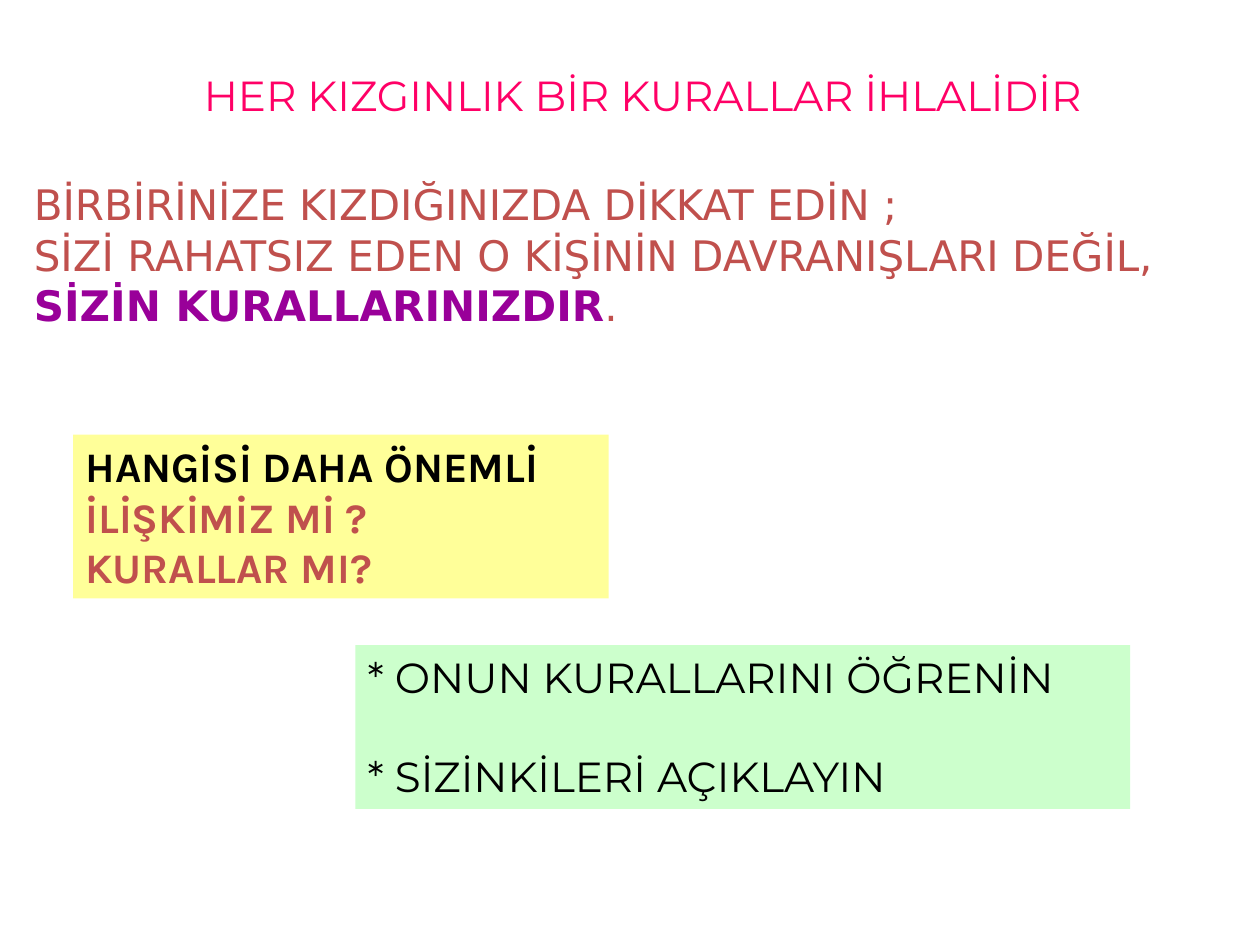
from pptx import Presentation
from pptx.dml.color import RGBColor as RGB
from pptx.enum.shapes import MSO_SHAPE as Shape
from pptx.enum.text import MSO_ANCHOR as Anchor, PP_ALIGN as Align
from pptx.util import Inches, Pt

PINK = RGB(0xFF, 0x00, 0x66)
RED = RGB(0xC0, 0x50, 0x4D)
PURPLE = RGB(0x99, 0x00, 0x99)
BLACK = RGB(0x00, 0x00, 0x00)
YELLOW = RGB(0xFF, 0xFF, 0x99)
GREEN = RGB(0xCC, 0xFF, 0xCC)


def write(shape, lines, font, align=Align.LEFT, gap=0):
    """Each line is a list of (text, colour, bold) runs."""
    frame = shape.text_frame
    frame.word_wrap = True
    frame.vertical_anchor = Anchor.TOP
    for i, line in enumerate(lines):
        para = frame.add_paragraph() if i else frame.paragraphs[0]
        para.alignment = align
        para.space_before = Pt(gap if i else 0)
        for text, color, bold in line:
            run = para.add_run()
            run.text = text
            run.font.name = font
            run.font.size = Pt(24)
            run.font.bold = bold
            run.font.color.rgb = color


def add_panel(slide, box, fill):
    panel = slide.shapes.add_shape(Shape.RECTANGLE, *map(Inches, box))
    panel.shadow.inherit = False
    panel.fill.solid()
    panel.fill.fore_color.rgb = fill
    panel.line.fill.background()
    return panel


def add_title(slide, box):
    title = slide.shapes.add_textbox(*map(Inches, box))
    write(title, [[("HER KIZGINLIK BİR KURALLAR İHLALİDİR", PINK, False)]],
          "Montserrat", align=Align.CENTER)


def add_advice(slide, box):
    advice = slide.shapes.add_textbox(*map(Inches, box))
    write(advice, [
        [("BİRBİRİNİZE KIZDIĞINIZDA DİKKAT EDİN ;", RED, False)],
        [("SİZİ RAHATSIZ EDEN O KİŞİNİN DAVRANIŞLARI DEĞİL,", RED, False)],
        [("SİZİN KURALLARINIZDIR", PURPLE, True), (".", RED, False)],
    ], "DejaVu Sans")


def add_question(slide, box):
    write(add_panel(slide, box, YELLOW), [
        [("HANGİSİ DAHA ÖNEMLİ", BLACK, True)],
        [("İLİŞKİMİZ Mİ ?", RED, True)],
        [("KURALLAR MI?", RED, True)],
    ], "Karla")


def add_steps(slide, box):
    write(add_panel(slide, box, GREEN), [
        [("* ONUN KURALLARINI ÖĞRENİN", BLACK, False)],
        [("* SİZİNKİLERİ AÇIKLAYIN", BLACK, False)],
    ], "Montserrat", gap=28)


def main():
    deck = Presentation()
    deck.slide_width, deck.slide_height = Inches(10), Inches(7.5)
    slide = deck.slides.add_slide(deck.slide_layouts[6])

    # Heading and advice
    add_title(slide, (1.12, 0.5, 7.96, 0.5))
    add_advice(slide, (0.17, 1.37, 9.71, 1.3))

    # Coloured panels
    add_question(slide, (0.58, 3.45, 4.25, 1.3))
    add_steps(slide, (2.82, 5.12, 6.15, 1.3))

    deck.save("out.pptx")


if __name__ == "__main__":
    main()
